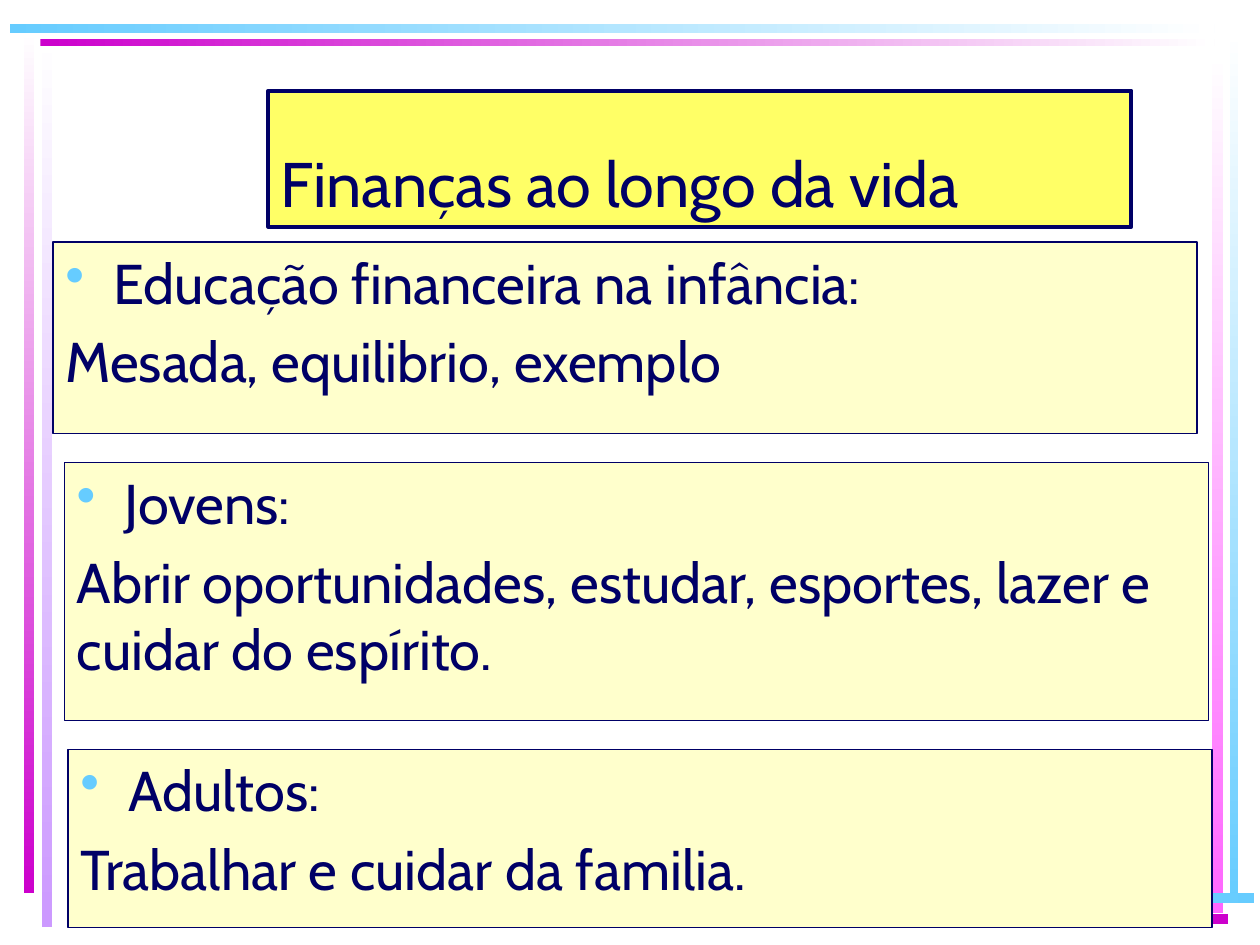
from dataclasses import dataclass

from lxml import etree
from pptx import Presentation
from pptx import util as u
from pptx.dml.color import RGBColor
from pptx.enum import shapes, text
from pptx.oxml.ns import qn

NAVY = RGBColor(0x00, 0x00, 0x66)
WHITE = RGBColor(0xFF, 0xFF, 0xFF)
SKY = RGBColor(0x66, 0xCC, 0xFF)
MAGENTA = RGBColor(0xCC, 0x00, 0xCC)
PINK = RGBColor(0xFF, 0x66, 0xFF)
LILAC = RGBColor(0xCC, 0x99, 0xFF)
YELLOW = RGBColor(0xFF, 0xFF, 0x66)
CREAM = RGBColor(0xFF, 0xFF, 0xCC)
FONT = "Cabin"
RIGHTWARD, DOWNWARD = 0, 270
BULLET_INDENT = u.Inches(0.38)


@dataclass
class Box:
    left: float
    top: float
    width: float
    height: float


@dataclass
class Bar:
    box: Box
    start: RGBColor
    end: RGBColor
    angle: int


@dataclass
class LifeStage:
    box: Box
    heading: str
    advice: str


# Frame bars, from back to front
BARS = [
    Bar(Box(0.33, 0.28, 0.08, 7.08), WHITE, LILAC, DOWNWARD),
    Bar(Box(0.19, 0.25, 0.08, 6.84), WHITE, MAGENTA, DOWNWARD),
    Bar(Box(9.76, 0.24, 0.07, 6.93), WHITE, SKY, DOWNWARD),
    Bar(Box(9.62, 0.42, 0.09, 6.83), WHITE, PINK, DOWNWARD),
    Bar(Box(0.45, 7.09, 9.5, 0.08), WHITE, SKY, RIGHTWARD),
    Bar(Box(0.45, 7.25, 9.3, 0.08), WHITE, MAGENTA, RIGHTWARD),
    Bar(Box(0.32, 0.31, 9.32, 0.06), MAGENTA, WHITE, RIGHTWARD),
    Bar(Box(0.08, 0.19, 9.56, 0.07), SKY, WHITE, RIGHTWARD),
]

STAGES = [
    LifeStage(Box(0.42, 1.92, 9.08, 1.52), "Educação financeira na infância:",
              "Mesada, equilibrio, exemplo"),
    LifeStage(Box(0.51, 3.67, 9.08, 2.05), "Jovens:",
              "Abrir oportunidades, estudar, esportes, lazer e cuidar do espírito."),
    LifeStage(Box(0.54, 5.95, 9.08, 1.41), "Adultos:",
              "Trabalhar e cuidar da familia."),
]


def set_all(target, values: dict) -> None:
    for name, value in values.items():
        setattr(target, name, value)


def add_rectangle(slide, box: Box):
    rectangle = slide.shapes.add_shape(
        shapes.MSO_SHAPE.RECTANGLE, u.Inches(box.left), u.Inches(box.top),
        u.Inches(box.width), u.Inches(box.height))
    rectangle.shadow.inherit = False
    return rectangle


def add_bar(slide, bar: Bar) -> None:
    strip = add_rectangle(slide, bar.box)
    strip.line.fill.background()
    strip.fill.gradient()
    strip.fill.gradient_angle = bar.angle
    for stop, color in zip(strip.fill.gradient_stops, (bar.start, bar.end)):
        stop.color.rgb = color


def add_panel(slide, box: Box, color: RGBColor, border: float, anchor):
    panel = add_rectangle(slide, box)
    panel.fill.solid()
    panel.fill.fore_color.rgb = color
    panel.line.color.rgb = NAVY
    panel.line.width = u.Pt(border)
    set_all(panel.text_frame, {"word_wrap": True, "vertical_anchor": anchor})
    return panel.text_frame


def write(paragraph, words: str, size: float, before: float = 0) -> None:
    set_all(paragraph, {"alignment": text.PP_ALIGN.LEFT,
                        "space_before": u.Pt(before)})
    run = paragraph.add_run()
    run.text = words
    set_all(run.font, {"name": FONT, "size": u.Pt(size)})
    run.font.color.rgb = NAVY


def add_bullet(paragraph, color: RGBColor) -> None:
    properties = paragraph._p.get_or_add_pPr()
    properties.set("marL", str(BULLET_INDENT))
    properties.set("indent", str(-BULLET_INDENT))
    bullet_color = etree.SubElement(properties, qn("a:buClr"))
    etree.SubElement(bullet_color, qn("a:srgbClr"), val=str(color))
    etree.SubElement(properties, qn("a:buChar"), char="•")


def add_stage(slide, stage: LifeStage) -> None:
    frame = add_panel(slide, stage.box, CREAM, 0.75, text.MSO_ANCHOR.TOP)
    heading = frame.paragraphs[0]
    write(heading, stage.heading, 32, before=6.4)
    add_bullet(heading, SKY)
    write(frame.add_paragraph(), stage.advice, 32, before=6.4)


def main() -> None:
    deck = Presentation()
    set_all(deck, {"slide_width": u.Inches(10), "slide_height": u.Inches(7.5)})
    slide = deck.slides.add_slide(deck.slide_layouts[6])

    # Decorative frame
    for bar in BARS:
        add_bar(slide, bar)

    # Title
    title = add_panel(slide, Box(2.13, 0.72, 6.85, 1.08), YELLOW, 2.25,
                      text.MSO_ANCHOR.BOTTOM)
    write(title.paragraphs[0], "Finanças ao longo da vida", 36)

    # Stages of life
    for stage in STAGES:
        add_stage(slide, stage)

    deck.save("out.pptx")


if __name__ == "__main__":
    main()
